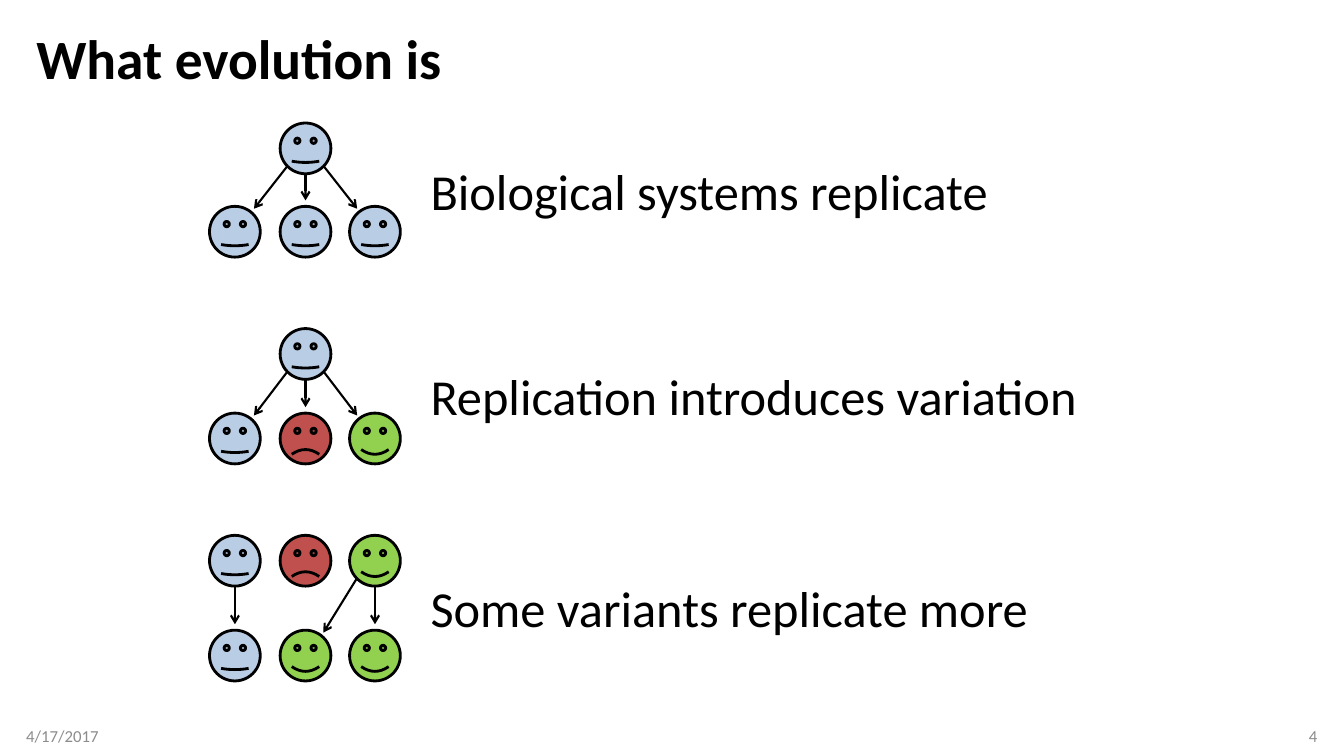
from lxml import etree
from pptx import Presentation
from pptx.dml.color import RGBColor
from pptx.enum.shapes import MSO_CONNECTOR, MSO_SHAPE
from pptx.enum.text import MSO_ANCHOR, MSO_AUTO_SIZE, PP_ALIGN
from pptx.oxml.ns import qn
from pptx.util import Cm, Pt

STRAIGHT = MSO_CONNECTOR.STRAIGHT
SMILEY = MSO_SHAPE.SMILEY_FACE
TOP, MIDDLE = MSO_ANCHOR.TOP, MSO_ANCHOR.MIDDLE
NO_AUTOFIT = MSO_AUTO_SIZE.NONE
LEFT, RIGHT = PP_ALIGN.LEFT, PP_ALIGN.RIGHT

BLACK = RGBColor(0x00, 0x00, 0x00)
GRAY = RGBColor(0x8C, 0x8C, 0x8C)
BLUE = RGBColor(0xB9, 0xCD, 0xE5)
RED = RGBColor(0xC0, 0x50, 0x4D)
GREEN = RGBColor(0x92, 0xD0, 0x50)

NEUTRAL, SAD, HAPPY = (BLUE, 0.012), (RED, -0.047), (GREEN, 0.047)

FACE = 1.28
COLUMNS = (5.28, 7.06, 8.81)
STATEMENT_LEFT = 10.6

FAN = [(1, -1), (1, 0), (1, 1)]
STAGES = [
    ("Biological systems replicate", 3.1, 2.1, 0.8,
     [None, NEUTRAL, None], [NEUTRAL, NEUTRAL, NEUTRAL], FAN),
    ("Replication introduces variation", 8.28, 2.13, 0.8,
     [None, NEUTRAL, None], [NEUTRAL, SAD, HAPPY], FAN),
    ("Some variants replicate more", 13.49, 2.39, 0.94,
     [NEUTRAL, SAD, HAPPY], [NEUTRAL, HAPPY, HAPPY],
     [(0, 0), (2, 0), (2, -1)]),
]


def write(frame, text, size=36, color=BLACK, bold=False, align=LEFT,
          anchor=TOP, spacing=1.0):
    frame.word_wrap = True
    frame.auto_size = NO_AUTOFIT
    frame.vertical_anchor = anchor
    frame.text = text
    paragraph = frame.paragraphs[0]
    paragraph.alignment = align
    paragraph.line_spacing = spacing
    font = paragraph.runs[0].font
    font.name, font.size, font.bold = "Calibri", Pt(size), bold
    font.color.rgb = color


class EvolutionSlide:
    def __init__(self, presentation):
        self.slide = presentation.slides.add_slide(presentation.slide_layouts[5])
        self.canvas = self.slide.shapes

    def title(self, text):
        title = self.slide.shapes.title
        title.left, title.top = Cm(0.66), Cm(0.64)
        title.width, title.height = Cm(32.54), Cm(1.83)
        write(title.text_frame, text, size=39.6, bold=True, anchor=MIDDLE,
              spacing=0.9)

    def text(self, text, left, top, width, height, **style):
        frame = self.canvas.add_textbox(
            Cm(left), Cm(top), Cm(width), Cm(height)).text_frame
        write(frame, text, **style)
        return frame

    def footer(self, text, left, align):
        frame = self.text(text, left, 18.03, 7.62, 1.02, size=12, color=GRAY,
                          align=align, anchor=MIDDLE)
        if align == LEFT:
            frame.margin_left = 0
        else:
            frame.margin_right = 0

    def face(self, left, top, mood):
        color, smile = mood
        face = self.canvas.add_shape(SMILEY, Cm(left), Cm(top), Cm(FACE), Cm(FACE))
        face.adjustments[0] = smile
        face.shadow.inherit = False
        face.fill.solid()
        face.fill.fore_color.rgb = color
        face.line.color.rgb = BLACK
        face.line.width = Pt(2)

    def arrow(self, x1, y1, x2, y2):
        arrow = self.canvas.add_connector(STRAIGHT, Cm(x1), Cm(y1), Cm(x2), Cm(y2))
        arrow.line.color.rgb = BLACK
        arrow.line.width = Pt(1.5)
        etree.SubElement(arrow.line._get_or_add_ln(), qn("a:tailEnd"), type="arrow")
        etree.SubElement(arrow._element.spPr, qn("a:effectLst"))

    def descent(self, column, side, top, drop):
        center = COLUMNS[column] + FACE / 2
        if side:
            self.arrow(center + 0.46 * side, top + 1.09,
                       center + 1.3 * side, top + drop + 0.06)
        else:
            self.arrow(center, top + FACE, center, top + drop - 0.15)

    def stage(self, statement, top, drop, offset, parents, children, links):
        self.canvas = self.slide.shapes.add_group_shape().shapes
        for column, side in links:
            self.descent(column, side, top, drop)
        for row_top, moods in ((top, parents), (top + drop, children)):
            for left, mood in zip(COLUMNS, moods):
                if mood:
                    self.face(left, row_top, mood)
        self.text(statement, STATEMENT_LEFT, top + offset, 17.98, 1.8)
        self.canvas = self.slide.shapes


def main():
    presentation = Presentation()
    presentation.slide_width, presentation.slide_height = Cm(33.87), Cm(19.05)
    slide = EvolutionSlide(presentation)
    slide.title("What evolution is")
    slide.footer("4/17/2017", 0.66, LEFT)
    slide.footer("4", 25.58, RIGHT)
    for stage in STAGES:
        slide.stage(*stage)
    presentation.save("out.pptx")


if __name__ == "__main__":
    main()
